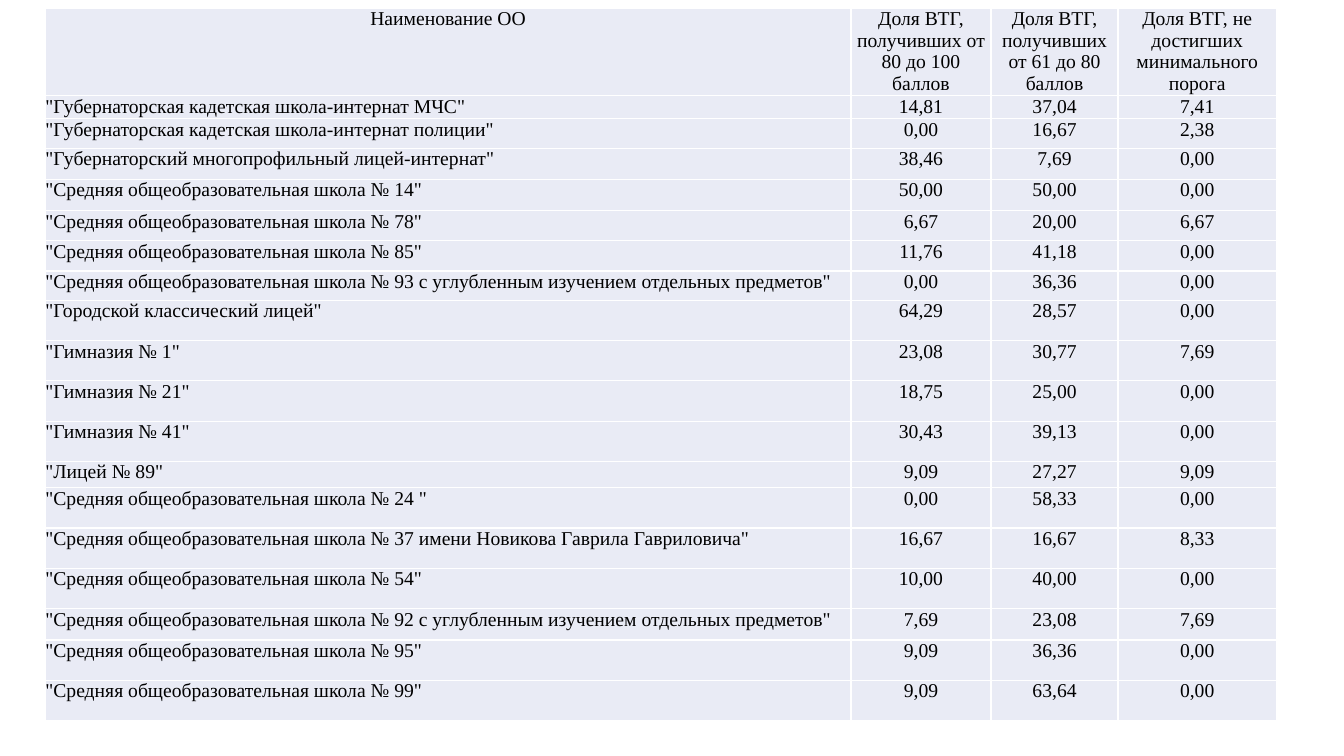
from typing import NamedTuple

from lxml.etree import SubElement
from pptx import Presentation
from pptx.dml.color import RGBColor
from pptx.enum.text import MSO_ANCHOR, PP_ALIGN
from pptx.oxml.ns import qn
from pptx.table import Table, _Cell
from pptx.util import Inches, Pt

FONT = "Times New Roman"
TEXT_COLOR = "000000"
CELL_COLOR = "E9EBF5"
BORDER_COLOR = "FFFFFF"

COLUMN_WIDTHS = (7.99, 1.39, 1.26, 1.57)
HEADER_HEIGHT = 0.87
HEADERS = (
    "Наименование ОО",
    "Доля ВТГ, получивших от 80 до 100 баллов",
    "Доля ВТГ, получивших от 61 до 80 баллов",
    "Доля ВТГ, не достигших минимального порога",
)


class School(NamedTuple):
    name: str
    high: float
    middle: float
    failed: float
    height: float = 0.4

    def texts(self) -> tuple[str, ...]:
        shares = (self.high, self.middle, self.failed)
        return (f'"{self.name}"', *(f"{share:.2f}".replace(".", ",") for share in shares))


SCHOOLS = (
    School("Губернаторская кадетская школа-интернат МЧС", 14.81, 37.04, 7.41, 0.23),
    School("Губернаторская кадетская школа-интернат полиции", 0, 16.67, 2.38, 0.29),
    School("Губернаторский многопрофильный лицей-интернат", 38.46, 7.69, 0, 0.31),
    School("Средняя общеобразовательная школа № 14", 50, 50, 0, 0.31),
    School("Средняя общеобразовательная школа № 78", 6.67, 20, 6.67, 0.3),
    School("Средняя общеобразовательная школа № 85", 11.76, 41.18, 0, 0.3),
    School("Средняя общеобразовательная школа № 93 с углубленным изучением отдельных предметов",
           0, 36.36, 0, 0.29),
    School("Городской классический лицей", 64.29, 28.57, 0),
    School("Гимназия № 1", 23.08, 30.77, 7.69),
    School("Гимназия № 21", 18.75, 25, 0),
    School("Гимназия № 41", 30.43, 39.13, 0),
    School("Лицей № 89", 9.09, 27.27, 9.09, 0.26),
    School("Средняя общеобразовательная школа № 24 ", 0, 58.33, 0),
    School("Средняя общеобразовательная школа № 37 имени Новикова Гаврила Гавриловича",
           16.67, 16.67, 8.33),
    School("Средняя общеобразовательная школа № 54", 10, 40, 0),
    School("Средняя общеобразовательная школа № 92 с углубленным изучением отдельных предметов",
           7.69, 23.08, 7.69, 0.31),
    School("Средняя общеобразовательная школа № 95", 9.09, 36.36, 0),
    School("Средняя общеобразовательная школа № 99", 9.09, 63.64, 0),
)


def color(value: str) -> RGBColor:
    return RGBColor.from_string(value)


def write_text(cell: _Cell, text: str, *, size: float = 14,
               align: PP_ALIGN = PP_ALIGN.CENTER) -> None:
    paragraph = cell.text_frame.paragraphs[0]
    paragraph.alignment = align
    run = paragraph.add_run()
    run.text = text
    run.font.name = FONT
    run.font.size = Pt(size)
    run.font.bold = False
    run.font.color.rgb = color(TEXT_COLOR)


def style_cell(cell: _Cell) -> None:
    """Remove the margins, draw the four borders and fill the cell."""
    cell.margin_left = cell.margin_right = cell.margin_top = cell.margin_bottom = 0
    cell.vertical_anchor = MSO_ANCHOR.TOP
    properties = cell._tc.get_or_add_tcPr()
    for side in ("lnL", "lnR", "lnT", "lnB"):
        line = SubElement(properties, qn(f"a:{side}"), w=str(Pt(1)))
        fill = SubElement(line, qn("a:solidFill"))
        SubElement(fill, qn("a:srgbClr"), val=BORDER_COLOR)
    cell.fill.solid()
    cell.fill.fore_color.rgb = color(CELL_COLOR)


def fill_row(table: Table, index: int, texts: tuple[str, ...], height: float) -> None:
    table.rows[index].height = Inches(height)
    for column, text in enumerate(texts):
        cell = table.cell(index, column)
        style_cell(cell)
        is_name = index > 0 and column == 0
        write_text(cell, text, align=PP_ALIGN.LEFT if is_name else PP_ALIGN.CENTER)


def main() -> None:
    presentation = Presentation()
    presentation.slide_width = Inches(13.33)
    presentation.slide_height = Inches(7.5)
    slide = presentation.slides.add_slide(presentation.slide_layouts[6])

    table_height = HEADER_HEIGHT + sum(school.height for school in SCHOOLS)
    table = slide.shapes.add_table(
        len(SCHOOLS) + 1, len(HEADERS), Inches(0.45), Inches(0.08),
        Inches(sum(COLUMN_WIDTHS)), Inches(table_height),
    ).table
    for column, width in zip(table.columns, COLUMN_WIDTHS):
        column.width = Inches(width)

    fill_row(table, 0, HEADERS, HEADER_HEIGHT)
    for index, school in enumerate(SCHOOLS, start=1):
        fill_row(table, index, school.texts(), school.height)
    presentation.save("out.pptx")


if __name__ == "__main__":
    main()
